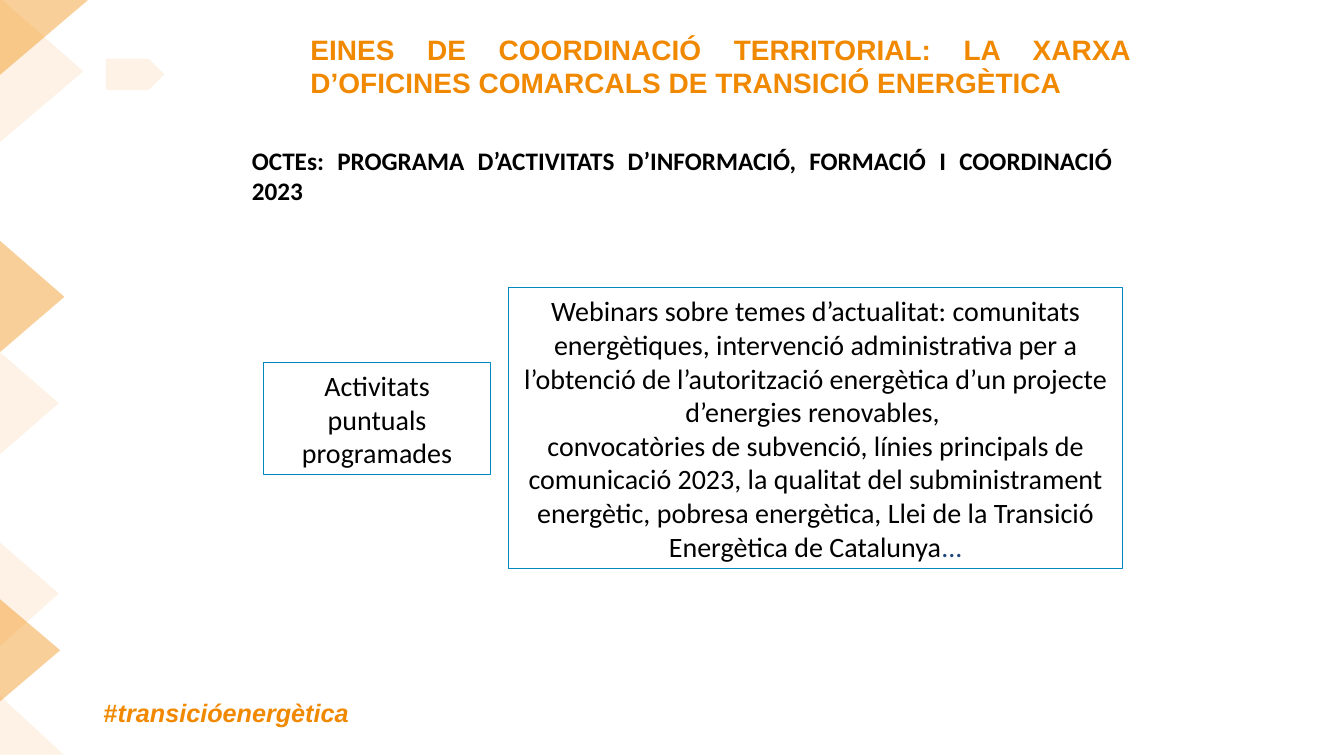
from lxml import etree
from pptx import Presentation
from pptx.dml.color import RGBColor
from pptx.enum.shapes import MSO_SHAPE
from pptx.enum.text import MSO_ANCHOR, MSO_AUTO_SIZE, PP_ALIGN
from pptx.oxml.ns import qn
from pptx.util import Pt

TOP, MIDDLE = MSO_ANCHOR.TOP, MSO_ANCHOR.MIDDLE
NO_FIT = MSO_AUTO_SIZE.NONE
LEFT, CENTER, JUSTIFY = PP_ALIGN.LEFT, PP_ALIGN.CENTER, PP_ALIGN.JUSTIFY
RECTANGLE, PENTAGON = MSO_SHAPE.RECTANGLE, MSO_SHAPE.PENTAGON
RIGHT_TRIANGLE = MSO_SHAPE.RIGHT_TRIANGLE

COLORS = {"orange": "F18900", "teal": "0189BF", "navy": "1F497D", "black": "000000"}
STRONG, FAINT = 40, 10
TRIANGLES = [
    ([(0, 501), (0, 428), (43, 464.5)], STRONG),
    ([(0, 324.5), (0, 251.5), (42, 288)], FAINT),
    ([(0, 251.5), (0, 172), (46, 212)], STRONG),
    ([(0, 101.5), (0, -1.4), (59.5, 51)], FAINT),
    ([(0, 53.5), (0, -1.4), (64.5, -1.4)], STRONG),
    ([(0, 461.5), (0, 387.5), (42, 424)], FAINT),
]


def color(name):
    return RGBColor.from_string(COLORS[name])


def write(frame, paragraphs, align=LEFT, anchor=TOP, size=20, font="Calibri",
          ink="black", bold=False):
    frame.word_wrap = True
    frame.auto_size = NO_FIT
    frame.vertical_anchor = anchor
    for index, spans in enumerate(paragraphs):
        para = frame.add_paragraph() if index else frame.paragraphs[0]
        para.alignment = align
        for text, changes in spans:
            span = para.add_run()
            span.text = text
            span.font.name = font
            span.font.size = Pt(size)
            span.font.bold = bold
            span.font.italic = changes.get("italic", False)
            span.font.color.rgb = color(changes.get("ink", ink))


class SlideBuilder:
    def __init__(self, deck):
        self.page = deck.slides.add_slide(deck.slide_layouts[5])
        self.accent = "orange"

    def title(self, text, left, top, width, height):
        box = self.page.shapes.title
        box.left, box.top, box.width, box.height = map(Pt, (left, top, width, height))
        write(box.text_frame, [[(text, {})]], align=JUSTIFY, font="Arial",
              ink=self.accent, bold=True)

    def text(self, spans, left, top, width, height, **style):
        box = self.page.shapes.add_textbox(*map(Pt, (left, top, width, height)))
        write(box.text_frame, [spans], size=18, bold=True, **style)

    def tint(self, shape, opacity):
        shape.shadow.inherit = False
        shape.fill.solid()
        shape.fill.fore_color.rgb = color(self.accent)
        shape.line.fill.background()
        tone = shape._element.spPr.find(qn("a:solidFill"))[0]
        etree.SubElement(tone, qn("a:alpha"), val=str(opacity * 1000))

    def triangle(self, points, opacity):
        start, *others = [(Pt(x), Pt(y)) for x, y in points]
        outline = self.page.shapes.build_freeform(*start)
        outline.add_line_segments(others, close=True)
        self.tint(outline.convert_to_shape(), opacity)

    def ornament(self, kind, left, top, width, height):
        shape = self.page.shapes.add_shape(kind, *map(Pt, (left, top, width, height)))
        self.tint(shape, FAINT)

    def framed_text(self, paragraphs, left, top, width, height):
        box = self.page.shapes.add_shape(RECTANGLE, *map(Pt, (left, top, width, height)))
        box.shadow.inherit = False
        box.fill.background()
        box.line.color.rgb = color("teal")
        box.line.width = Pt(0.75)
        write(box.text_frame, paragraphs, align=CENTER, anchor=MIDDLE)


def main():
    deck = Presentation()
    deck.slide_width, deck.slide_height = Pt(960), Pt(540)
    slide = SlideBuilder(deck)

    slide.text([("#", {}), ("transicióenergètica", {"italic": True})],
               67, 494.6, 269, 29, font="Arial", ink="orange")
    slide.ornament(PENTAGON, 75.6, 41.8, 41.8, 22.3)
    for points, opacity in TRIANGLES:
        slide.triangle(points, opacity)
    slide.ornament(RIGHT_TRIANGLE, 0, 497, 45.4, 42)

    slide.framed_text([[("Activitats puntuals programades", {})]], 188, 259.2, 162.7, 80)
    slide.framed_text([
        [("Webinars sobre temes d’actualitat: comunitats energètiques, intervenció "
          "administrativa per a l’obtenció de l’autorització energètica d’un projecte "
          "d’energies renovables, ", {})],
        [("convocatòries de subvenció, línies principals de comunicació 2023, la "
          "qualitat del subministrament energètic, pobresa energètica, Llei de la "
          "Transició Energètica de Catalunya", {}), ("...", {"ink": "navy"})],
    ], 363.4, 205.4, 438.5, 201)

    slide.title("EINES DE COORDINACIÓ TERRITORIAL: LA XARXA D’OFICINES COMARCALS "
                "DE TRANSICIÓ ENERGÈTICA", 214.5, 19.5, 600, 46)
    slide.text([("OCTEs: PROGRAMA D’ACTIVITATS D’INFORMACIÓ, FORMACIÓ I COORDINACIÓ "
                 "2023", {})], 172.8, 100, 629, 51, align=JUSTIFY)
    deck.save("out.pptx")


if __name__ == "__main__":
    main()
